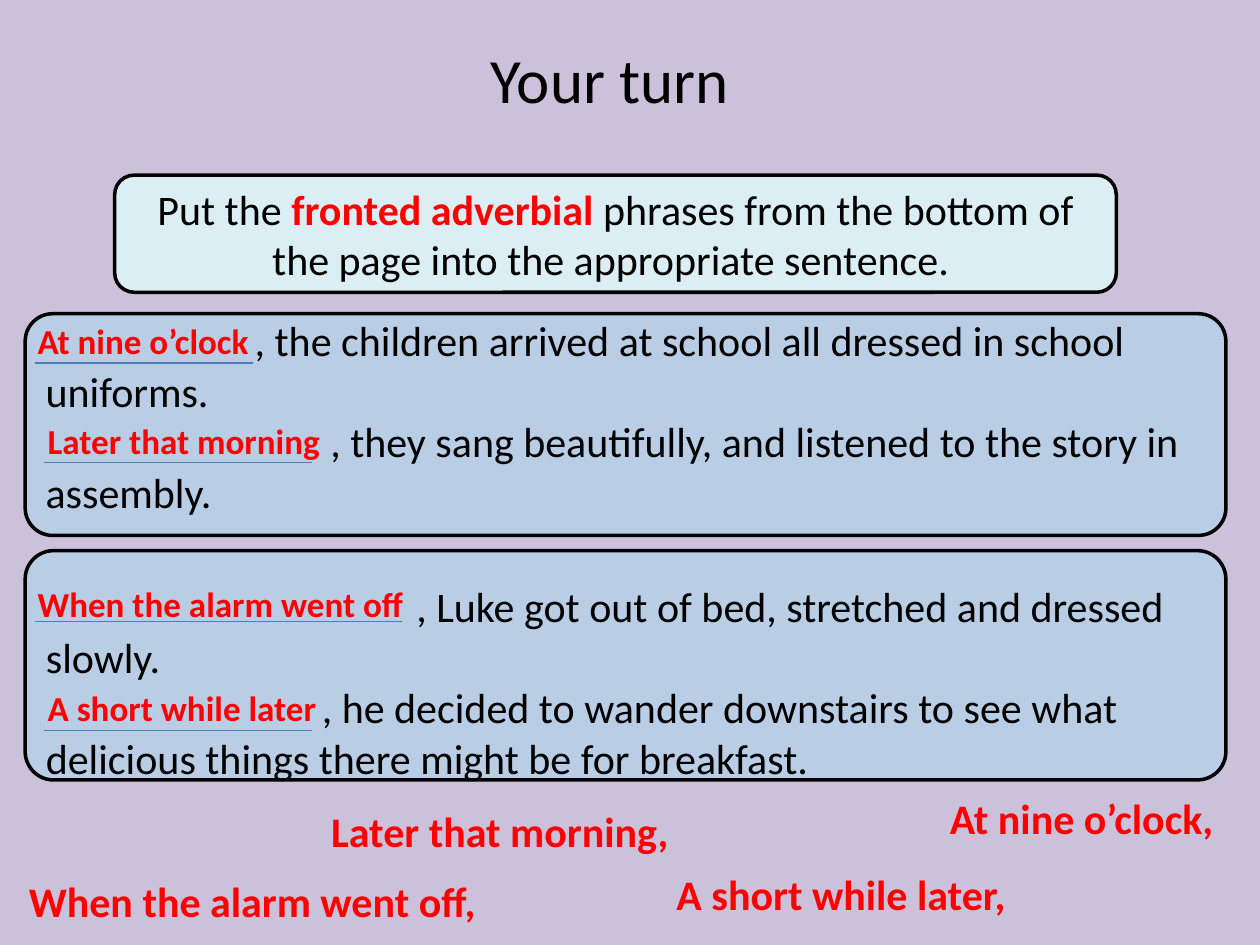
from lxml import etree
from pptx import Presentation
from pptx.dml.color import RGBColor
from pptx.enum.shapes import MSO_CONNECTOR, MSO_SHAPE
from pptx.enum.text import MSO_ANCHOR, PP_ALIGN
from pptx.oxml.ns import qn
from pptx.util import Inches, Pt

ROUNDED = MSO_SHAPE.ROUNDED_RECTANGLE
STRAIGHT = MSO_CONNECTOR.STRAIGHT
MIDDLE = MSO_ANCHOR.MIDDLE
LEFT, CENTER = PP_ALIGN.LEFT, PP_ALIGN.CENTER

LILAC = RGBColor(0xCC, 0xC1, 0xDA)
AQUA = RGBColor(0xDB, 0xEE, 0xF4)
BLUE = RGBColor(0xB9, 0xCD, 0xE5)
RULE_BLUE = RGBColor(0x4B, 0x7E, 0xBC)
RED = RGBColor(0xFF, 0x00, 0x00)
BLACK = RGBColor(0x00, 0x00, 0x00)

PLAIN = {"size": Pt(24), "bold": False, "color": BLACK}
TITLE = {**PLAIN, "size": Pt(36)}
PHRASE = {**PLAIN, "bold": True, "color": RED}
ANSWER = {**PHRASE, "size": Pt(20)}

# text, left, top, width
PHRASES = [
    ("When the alarm went off,", 0.13, 6.9, 4.02),
    ("Later that morning,", 2.53, 6.34, 3.18),
    ("At nine o’clock,", 7.44, 6.24, 3.33),
    ("A short while later,", 5.27, 6.84, 2.83),
]
# text, left, top, width, then the rule's left, right and height
ANSWERS = [
    ("At nine o’clock", 0.2, 2.49, 3.33, 0.28, 2.01, 2.88),
    ("Later that morning", 0.28, 3.28, 3.18, 0.35, 2.48, 3.67),
    ("When the alarm went off", 0.2, 4.57, 3.23, 0.28, 3.19, 4.93),
    ("A short while later", 0.28, 5.4, 2.83, 0.35, 2.48, 5.8),
]
# top, height, top inset, bottom inset, sentences with the gap left for an answer
SENTENCE_PANELS = [
    (2.49, 1.76, 0, 0.14, [
        (1.66, ", the children arrived at school all dressed in school uniforms."),
        (2.26, ", they sang beautifully, and listened to the story in assembly."),
    ]),
    (4.37, 1.82, 0.26, 0, [
        (2.94, ", Luke got out of bed, stretched and dressed slowly."),
        (2.19, ", he decided to wander downstairs to see what delicious things "
               "there might be for breakfast."),
    ]),
]


def add_span(para, text, style):
    span = para.add_run()
    span.text = text
    span.font.name = "Calibri"
    for name, value in style.items():
        if name == "color":
            span.font.color.rgb = value
        else:
            setattr(span.font, name, value)


def add_label(slide, text, left, top, width, height, style, align=LEFT, wrap=True):
    box = slide.shapes.add_textbox(*map(Inches, (left, top, width, height)))
    box.text_frame.word_wrap = wrap
    para = box.text_frame.paragraphs[0]
    para.alignment = align
    add_span(para, text, style)


def add_panel(slide, left, top, width, height, fill, rounding):
    """Add an outlined rounded box and return its text frame."""
    panel = slide.shapes.add_shape(ROUNDED, *map(Inches, (left, top, width, height)))
    panel.adjustments[0] = rounding
    panel.shadow.inherit = False
    panel.fill.solid()
    panel.fill.fore_color.rgb = fill
    panel.line.color.rgb = BLACK
    panel.line.width = Pt(2)
    frame = panel.text_frame
    frame.word_wrap = True
    frame.vertical_anchor = MIDDLE
    return frame


def add_sentences(slide, top, height, inset_top, inset_bottom, sentences):
    frame = add_panel(slide, 0.2, top, 9.53, height, BLUE, 0.124)
    frame.margin_top = Inches(inset_top)
    frame.margin_bottom = Inches(inset_bottom)
    for index, (gap, text) in enumerate(sentences):
        para = frame.add_paragraph() if index else frame.paragraphs[0]
        para.alignment = LEFT
        add_span(para, text, PLAIN)
        para._p.get_or_add_pPr().set("indent", str(Inches(gap)))


def add_rule(slide, left, right, height):
    rule = slide.shapes.add_connector(
        STRAIGHT, *map(Inches, (left, height, right, height)))
    rule.line.color.rgb = RULE_BLUE
    rule.line.width = Pt(0.75)
    etree.SubElement(rule._element.spPr, qn("a:effectLst"))


def add_instruction(slide):
    frame = add_panel(slide, 0.91, 1.39, 7.95, 0.93, AQUA, 0.167)
    para = frame.paragraphs[0]
    para.alignment = CENTER
    add_span(para, "Put the ", PLAIN)
    add_span(para, "fronted adverbial ", PHRASE)
    add_span(para, "phrases from the bottom of the page into the "
                   "appropriate sentence. ", PLAIN)


def main():
    deck = Presentation()
    deck.slide_width, deck.slide_height = Inches(10), Inches(7.5)
    slide = deck.slides.add_slide(deck.slide_layouts[6])
    slide.background.fill.solid()
    slide.background.fill.fore_color.rgb = LILAC

    for text, left, top, width in PHRASES:
        add_label(slide, text, left, top, width, 0.5, PHRASE)
    add_instruction(slide)
    for panel in SENTENCE_PANELS:
        add_sentences(slide, *panel)
    for text, left, top, width, *rule in ANSWERS:
        add_label(slide, text, left, top, width, 0.44, ANSWER)
        add_rule(slide, *rule)
    add_label(slide, "Your turn", 3.79, 0.27, 2.1, 0.71, TITLE, CENTER, wrap=False)

    deck.save("out.pptx")


if __name__ == "__main__":
    main()
